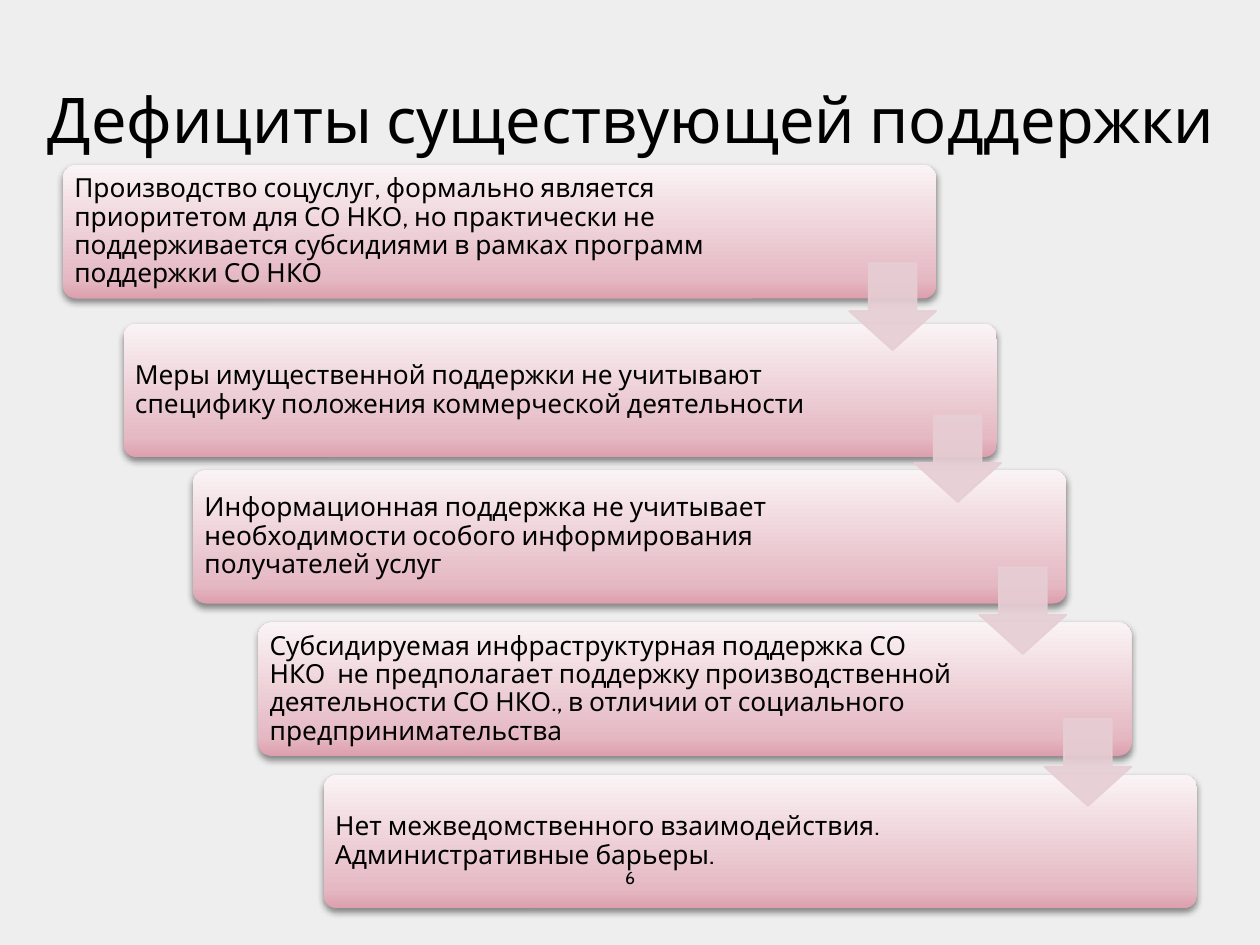
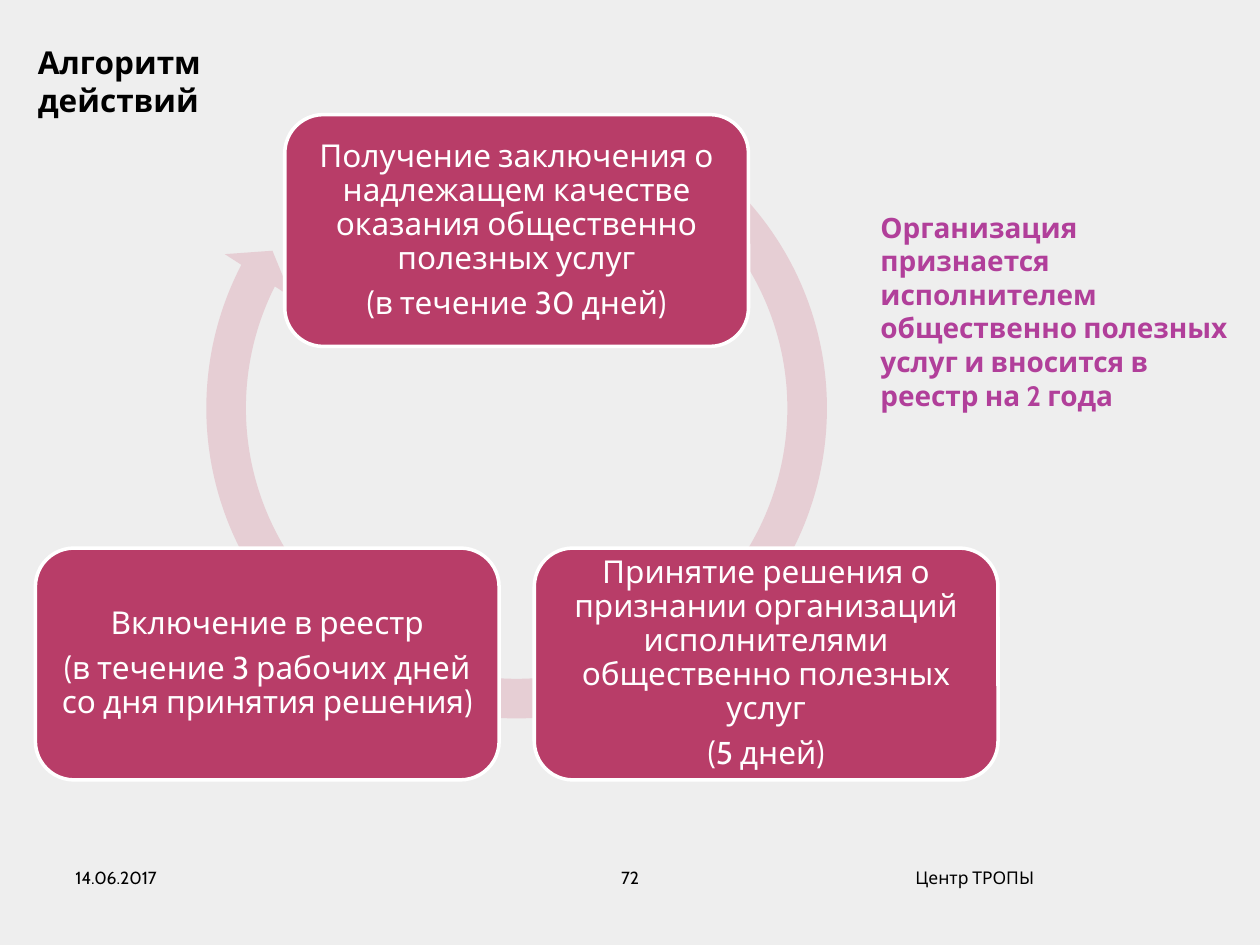
from copy import deepcopy
from dataclasses import dataclass

from lxml.etree import SubElement
from pptx import Presentation
from pptx.dml.color import RGBColor
from pptx.enum.shapes import MSO_SHAPE
from pptx.enum.text import MSO_ANCHOR, MSO_AUTO_SIZE, PP_ALIGN
from pptx.oxml.ns import qn
from pptx.util import Pt


@dataclass(frozen=True)
class Theme:
    font: str = "Cabin"
    background: str = "EEEEEE"
    ink: str = "000000"
    white: str = "FFFFFF"
    berry: str = "B83D68"
    violet: str = "B13F9A"
    arrow: str = "E6CED4"
    gradient: tuple = ((0, "DC9FAD"), (0.15, "E5B9C3"), (1, "FAF3F5"))
    title_size: float = 36
    heading_size: float = 18
    callout_size: float = 16
    deficit_size: float = 15
    footer_size: float = 10


def rgb(code):
    return RGBColor.from_string(code)


def points(*lengths):
    return [Pt(length) for length in lengths]


class Deck:
    def __init__(self, theme):
        self.theme = theme
        self.presentation = Presentation()
        self.presentation.slide_width = Pt(720)
        self.presentation.slide_height = Pt(540)
        backdrop = self.presentation.slide_master.background.fill
        backdrop.solid()
        backdrop.fore_color.rgb = rgb(theme.background)
        self.slide = None

    def new_slide(self):
        layout = self.presentation.slide_layouts.get_by_name("Title Only")
        self.slide = self.presentation.slides.add_slide(layout)

    def fill_text(self, frame, paragraphs, size, color, bold=False,
                  align=PP_ALIGN.LEFT, anchor=MSO_ANCHOR.TOP,
                  spacing=1.0, after=0):
        frame.word_wrap = True
        frame.vertical_anchor = anchor
        for index, text in enumerate(paragraphs):
            paragraph = frame.add_paragraph() if index else frame.paragraphs[0]
            paragraph.alignment = align
            paragraph.line_spacing = spacing
            paragraph.space_before = Pt(0)
            paragraph.space_after = Pt(after)
            run = paragraph.add_run()
            run.text = text
            run.font.name = self.theme.font
            run.font.size = Pt(size)
            run.font.bold = bold
            run.font.color.rgb = rgb(color)

    def title(self, text, place, size, bold=False, anchor=MSO_ANCHOR.BOTTOM):
        heading = self.slide.shapes.title
        heading.left, heading.top, heading.width, heading.height = points(*place)
        heading.text_frame.auto_size = MSO_AUTO_SIZE.NONE
        self.fill_text(heading.text_frame, [text], size, self.theme.ink, bold,
                       anchor=anchor)

    def label(self, text, place, size, color=None, bold=False,
              align=PP_ALIGN.LEFT):
        caption = self.slide.shapes.add_textbox(*points(*place))
        self.fill_text(caption.text_frame, [text], size,
                       color or self.theme.ink, bold, align)

    def preset(self, kind, place, fill=None, adjustments=()):
        figure = self.slide.shapes.add_shape(kind, *points(*place))
        figure.shadow.inherit = False
        figure.line.fill.background()
        for index, value in enumerate(adjustments):
            figure.adjustments[index] = value
        if fill:
            figure.fill.solid()
            figure.fill.fore_color.rgb = rgb(fill)
        return figure

    def card(self, paragraphs, place, size, color, inset, right_inset,
             align, fill=None, adjustments=()):
        panel = self.preset(MSO_SHAPE.ROUNDED_RECTANGLE, place, fill, adjustments)
        frame = panel.text_frame
        frame.margin_left = frame.margin_top = frame.margin_bottom = Pt(inset)
        frame.margin_right = Pt(right_inset)
        self.fill_text(frame, paragraphs, size, color, align=align,
                       anchor=MSO_ANCHOR.MIDDLE, spacing=0.9,
                       after=0.35 * size)
        return panel

    def deficit(self, text, left, top):
        panel = self.card([text], (left, top, 499, 76.3),
                          self.theme.deficit_size, self.theme.ink,
                          4.3, 91.5, PP_ALIGN.LEFT, adjustments=(0.1,))
        panel.fill.gradient()
        panel.fill.gradient_angle = 90
        properties = panel.element.spPr
        stop_list = properties.find(".//" + qn("a:gsLst"))
        stop_list.append(deepcopy(stop_list[0]))
        for stop, (position, color) in zip(panel.fill.gradient_stops,
                                           self.theme.gradient):
            stop.position = position
            stop.color.rgb = rgb(color)
        shadow = SubElement(properties.find(qn("a:effectLst")),
                            qn("a:outerShdw"), blurRad=str(Pt(4)),
                            dist=str(Pt(2)), dir="5400000", rotWithShape="0")
        shade = SubElement(shadow, qn("a:srgbClr"), val=self.theme.ink)
        SubElement(shade, qn("a:alpha"), val="43000")

    def down_arrow(self, left, top):
        arrow = self.preset(MSO_SHAPE.DOWN_ARROW, (left, top, 49.6, 49.6),
                            self.theme.arrow, (0.55, 0.45))
        arrow.line.color.rgb = rgb(self.theme.arrow)
        arrow.line.width = Pt(1)
        for color in arrow.element.spPr.iter(qn("a:srgbClr")):
            SubElement(color, qn("a:alpha"), val="90000")

    def step(self, paragraphs, left, top):
        panel = self.card(paragraphs, (left, top, 265, 132.5),
                          self.theme.heading_size, self.theme.white,
                          5, 5, PP_ALIGN.CENTER, self.theme.berry)
        panel.line.color.rgb = rgb(self.theme.white)
        panel.line.width = Pt(2)

    def footer(self, number, date=None, centre=None):
        parts = ((date, 36, 168, PP_ALIGN.LEFT),
                 (centre, 516, 168, PP_ALIGN.LEFT),
                 (number, 246, 228, PP_ALIGN.CENTER))
        for text, left, width, align in parts:
            if text:
                self.label(text, (left, 492, width, 37.5),
                           self.theme.footer_size, align=align)


DEFICITS = (
    (36, 94.3, "Производство соцуслуг, формально является приоритетом для "
     "СО НКО, но практически не поддерживается субсидиями в рамках программ "
     "поддержки СО НКО"),
    (70.6, 185, "Меры имущественной поддержки не учитывают специфику "
     "положения коммерческой деятельности"),
    (110.3, 268.6, "Информационная поддержка не учитывает необходимости "
     "особого информирования получателей услуг"),
    (147.6, 355.7, "Субсидируемая инфраструктурная поддержка СО НКО  не "
     "предполагает поддержку производственной деятельности СО НКО., в отличии "
     "от социального предпринимательства"),
    (185, 442.8, "Нет межведомственного взаимодействия. "
     "Административные барьеры."),
)

STEPS = (
    (162.7, 65.5, ("Получение заключения о надлежащем качестве оказания "
                   "общественно полезных услуг", "(в течение 30 дней)")),
    (305.3, 313.2, ("Принятие решения о признании организаций исполнителями "
                    "общественно полезных услуг", "(5 дней)")),
    (20.2, 313.2, ("Включение в реестр",
                   "(в течение 3 рабочих дней со дня принятия решения)")),
)


def build_deficits(deck):
    deck.new_slide()
    deck.title("Дефициты существующей поддержки", (20, 37.5, 686, 55.4),
               deck.theme.title_size)
    for left, top, text in DEFICITS:
        deck.deficit(text, left, top)
    for index in range(len(DEFICITS) - 1):
        deck.down_arrow(485.3 + 37.2 * index, 150.5 + 86.8 * index)
    deck.footer("6")


def build_algorithm(deck):
    theme = deck.theme
    deck.new_slide()
    deck.preset(MSO_SHAPE.CIRCULAR_ARROW, (106.6, 44.6, 377.3, 377.3),
                theme.arrow, (0.06, 3.4, 124.28, 182.65, 0.06))
    for left, top, paragraphs in STEPS:
        deck.step(paragraphs, left, top)
    deck.label("Организация признается исполнителем общественно полезных "
               "услуг и вносится в реестр на 2 года", (496, 116.6, 215.3, 85),
               theme.callout_size, theme.violet, bold=True)
    deck.title("Алгоритм действий", (14.4, 20.9, 172.8, 29),
               theme.heading_size, bold=True, anchor=MSO_ANCHOR.TOP)
    deck.footer("72", "14.06.2017", "Центр ТРОПЫ")


def main():
    deck = Deck(Theme())
    build_deficits(deck)
    build_algorithm(deck)
    deck.presentation.save("out.pptx")


if __name__ == "__main__":
    main()
